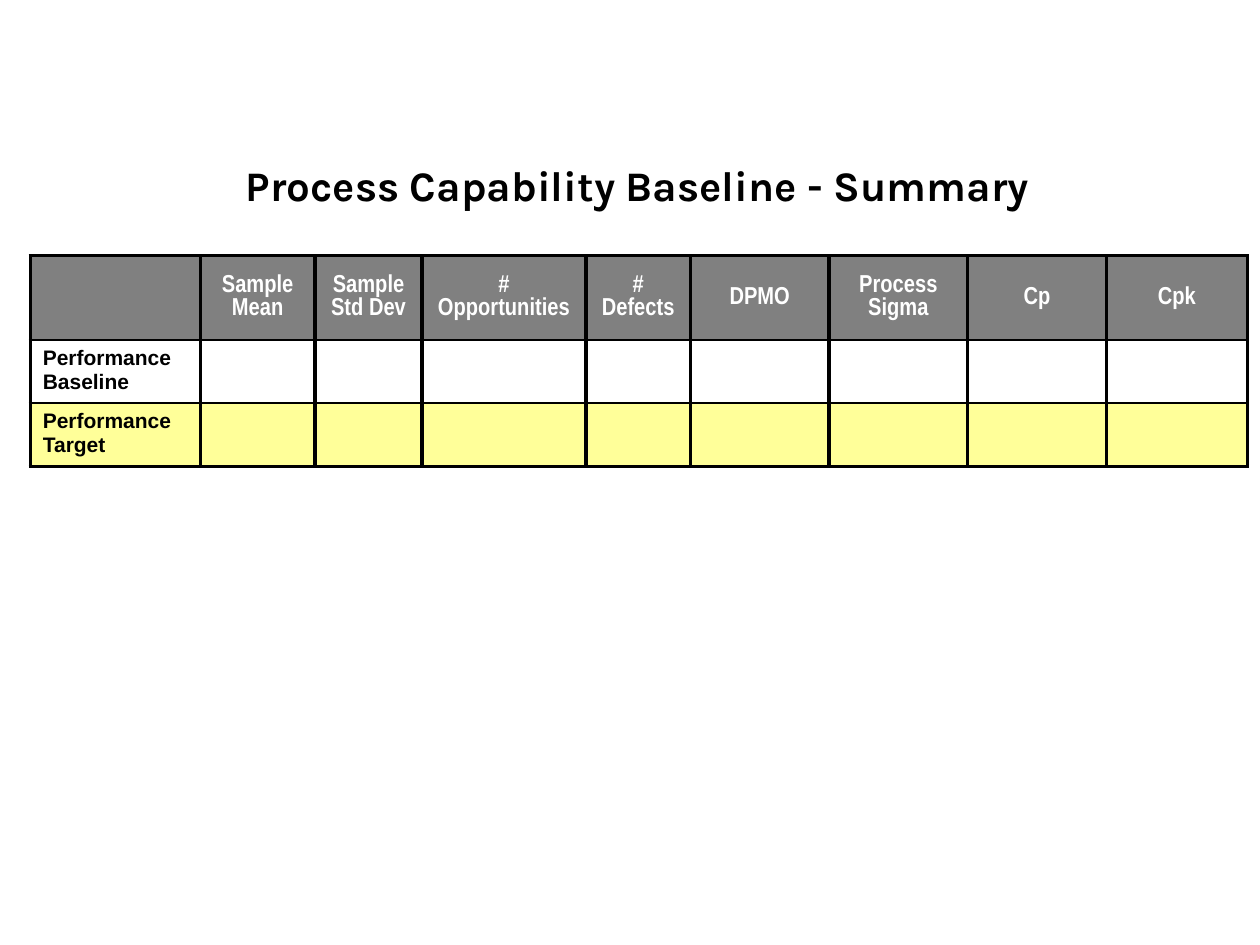
from lxml.etree import SubElement
from pptx import Presentation
from pptx.dml.color import RGBColor as Rgb
from pptx.enum.text import MSO_ANCHOR as Anchor, PP_ALIGN as Align
from pptx.oxml.ns import qn
from pptx.util import Inches, Pt

COLORS = {"black": "000000", "white": "FFFFFF", "gray": "808080", "yellow": "FFFF99"}
HEADS = ["", "Sample Mean", "Sample Std Dev", "# Opportunities", "# Defects",
         "DPMO", "Process Sigma", "Cp", "Cpk"]
LABELS = ["Performance Baseline", "Performance Target"]
WIDTHS = [1.35, 0.91, 0.85, 1.3, 0.83, 1.1, 1.1, 1.1, 1.12]
HEIGHTS = [0.67, 0.49, 0.41]
FILLS = ["gray", "white", "yellow"]
THICK, THIN = 2.25, 1


def rgb(name):
    return Rgb.from_string(COLORS[name])


def add_run(frame, text, font, size, color, align):
    para = frame.paragraphs[0]
    para.alignment = align
    run = para.add_run()
    run.text = text
    run.font.name = font
    run.font.size = Pt(size)
    run.font.bold = True
    run.font.color.rgb = rgb(color)


def add_title(slide):
    box = slide.shapes.add_textbox(Inches(0.56), Inches(1.22), Inches(9), Inches(1.25))
    box.fill.solid()
    box.fill.fore_color.rgb = rgb("white")
    box.text_frame.word_wrap = True
    add_run(box.text_frame, "Process Capability Baseline - Summary",
            "Karla", 24, "black", Align.CENTER)


def set_edges(cell, top, base):
    """Draw thick sides and the given top and bottom lines; call before the fill."""
    props = cell._tc.get_or_add_tcPr()
    for tag, width in [("a:lnL", THICK), ("a:lnR", THICK), ("a:lnT", top), ("a:lnB", base)]:
        line = SubElement(props, qn(tag), w=str(Pt(width)))
        fill = SubElement(line, qn("a:solidFill"))
        SubElement(fill, qn("a:srgbClr"), val=COLORS["black"])


def add_grid(slide):
    rows, cols = len(HEIGHTS), len(WIDTHS)
    table = slide.shapes.add_table(rows, cols, Inches(0.24), Inches(2.03),
                                   Inches(sum(WIDTHS)), Inches(sum(HEIGHTS))).table
    table.first_row = table.horz_banding = False
    for col, width in zip(table.columns, WIDTHS):
        col.width = Inches(width)
    for i, (row, height) in enumerate(zip(table.rows, HEIGHTS)):
        row.height = Inches(height)
        for cell in row.cells:
            set_edges(cell, THIN if i else THICK, THIN if i < rows - 1 else THICK)
            cell.fill.solid()
            cell.fill.fore_color.rgb = rgb(FILLS[i])
    return table


def fill_text(table):
    for col, head in enumerate(HEADS):
        if head:
            cell = table.cell(0, col)
            cell.vertical_anchor = Anchor.MIDDLE
            add_run(cell.text_frame, head, "Arial Narrow", 14, "white", Align.CENTER)
    for row, label in enumerate(LABELS, 1):
        add_run(table.cell(row, 0).text_frame, label, "Arial", 12, "black", Align.LEFT)


def main():
    deck = Presentation()
    deck.slide_width, deck.slide_height = Inches(10), Inches(7.5)
    slide = deck.slides.add_slide(deck.slide_layouts[6])
    add_title(slide)
    fill_text(add_grid(slide))
    deck.save("out.pptx")


if __name__ == "__main__":
    main()
